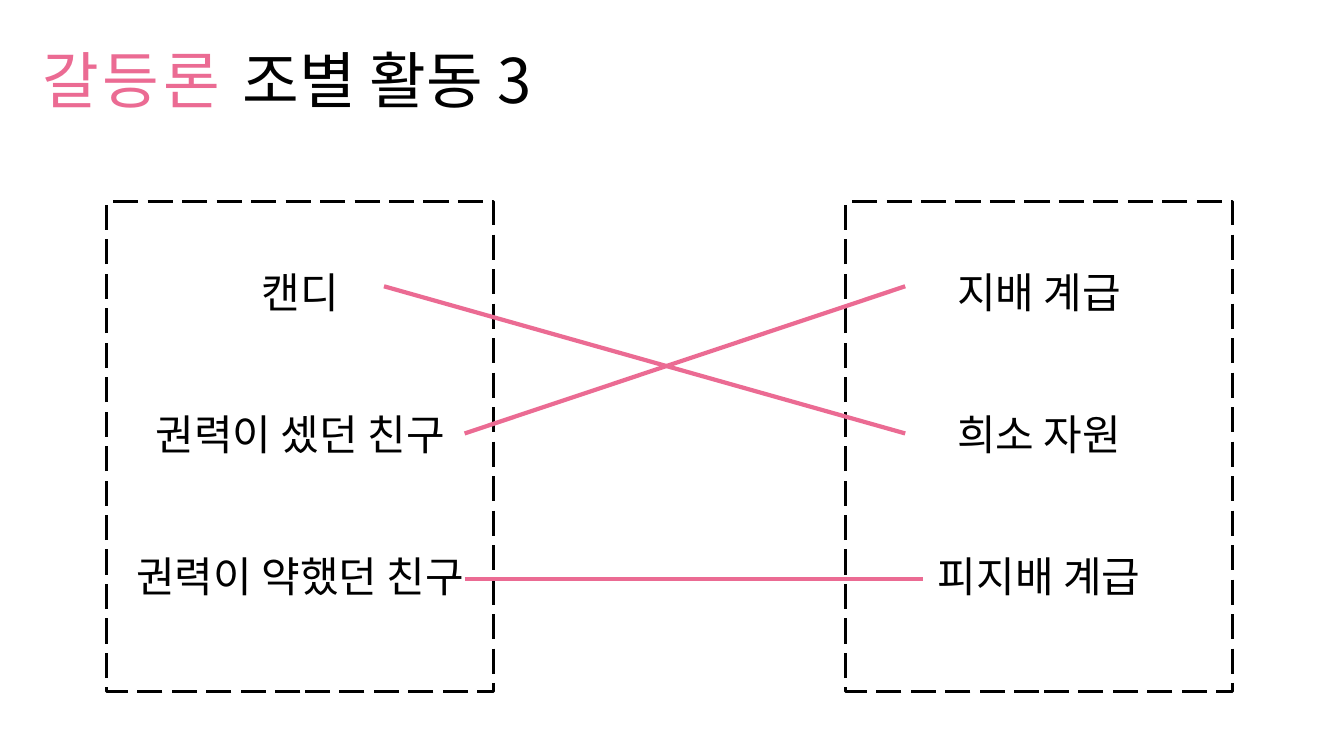
from pptx import Presentation
from pptx.dml.color import RGBColor
from pptx.enum.dml import MSO_LINE
from pptx.enum.shapes import MSO_CONNECTOR, MSO_SHAPE
from pptx.enum.text import MSO_ANCHOR, PP_ALIGN
from pptx.oxml.ns import qn
from pptx.util import Pt
from lxml import etree

RECT, LINE = MSO_SHAPE.RECTANGLE, MSO_CONNECTOR.STRAIGHT
DASH, MID, CENTER = MSO_LINE.LONG_DASH, MSO_ANCHOR.MIDDLE, PP_ALIGN.CENTER
PINK = RGBColor(0xEB, 0x6B, 0x93)
BLACK = RGBColor(0, 0, 0)
FONT = "Noto Sans CJK KR"

# Content: title runs are text, colour, letter spacing
TITLE = [("갈등론 ", PINK, 3), ("조별 활동 3", BLACK, 0)]
LISTS = [
    ["캔디", "권력이 셌던 친구", "권력이 약했던 친구"],
    ["지배 계급", "희소 자원", "피지배 계급"],
]
# Matches: left row, right row
PAIRS = [(0, 1), (1, 0), (2, 2)]

# Layout in points
BOX_X, BOX_Y, BOX_W, BOX_H = (76.3, 604.1), 144, 276.5, 349.9
ROW_Y = (204.5, 309.6, 413.3)
FROM_X = (274.3, 331.9, 331.9)
TO_X = (646.6, 646.6, 659.5)
ROW_GAP = 65.2
FOOT = 22


def style(run, size, color):
    run.font.size = Pt(size)
    run.font.name = FONT
    run.font.color.rgb = color
    east = etree.SubElement(run.font._element, qn("a:ea"))
    east.set("typeface", FONT)


def add_title(slide):
    box = slide.shapes.add_textbox(Pt(23), Pt(18), Pt(828), Pt(82.8))
    frame = box.text_frame
    frame.word_wrap = True
    frame.vertical_anchor = MID
    para = frame.paragraphs[0]
    para.line_spacing = 0.9
    for text, color, space in TITLE:
        run = para.add_run()
        run.text = text
        style(run, 44, color)
        run.font._element.set("spc", str(space * 100))


def add_list(slide, x, items):
    box = slide.shapes.add_shape(RECT, Pt(x), Pt(BOX_Y), Pt(BOX_W), Pt(BOX_H))
    box.shadow.inherit = False
    box.fill.background()
    box.line.color.rgb = BLACK
    box.line.width = Pt(2.25)
    box.line.dash_style = DASH
    frame = box.text_frame
    frame.word_wrap = True
    frame.vertical_anchor = MID
    frame.margin_bottom = Pt(FOOT)
    frame.text = "\n".join(items)
    for row, para in enumerate(frame.paragraphs):
        para.alignment = CENTER
        if row:
            para.space_before = Pt(ROW_GAP)
        style(para.runs[0], 30, BLACK)


def add_match(slide, left, right):
    line = slide.shapes.add_connector(
        LINE, Pt(FROM_X[left]), Pt(ROW_Y[left]), Pt(TO_X[right]), Pt(ROW_Y[right]))
    line.line.color.rgb = PINK
    line.line.width = Pt(3)
    etree.SubElement(line._element.spPr, qn("a:effectLst"))


def main():
    deck = Presentation()
    deck.slide_width, deck.slide_height = Pt(960), Pt(540)
    slide = deck.slides.add_slide(deck.slide_layouts[6])
    add_title(slide)
    for x, items in zip(BOX_X, LISTS):
        add_list(slide, x, items)
    for left, right in PAIRS:
        add_match(slide, left, right)
    deck.save("out.pptx")


if __name__ == "__main__":
    main()
